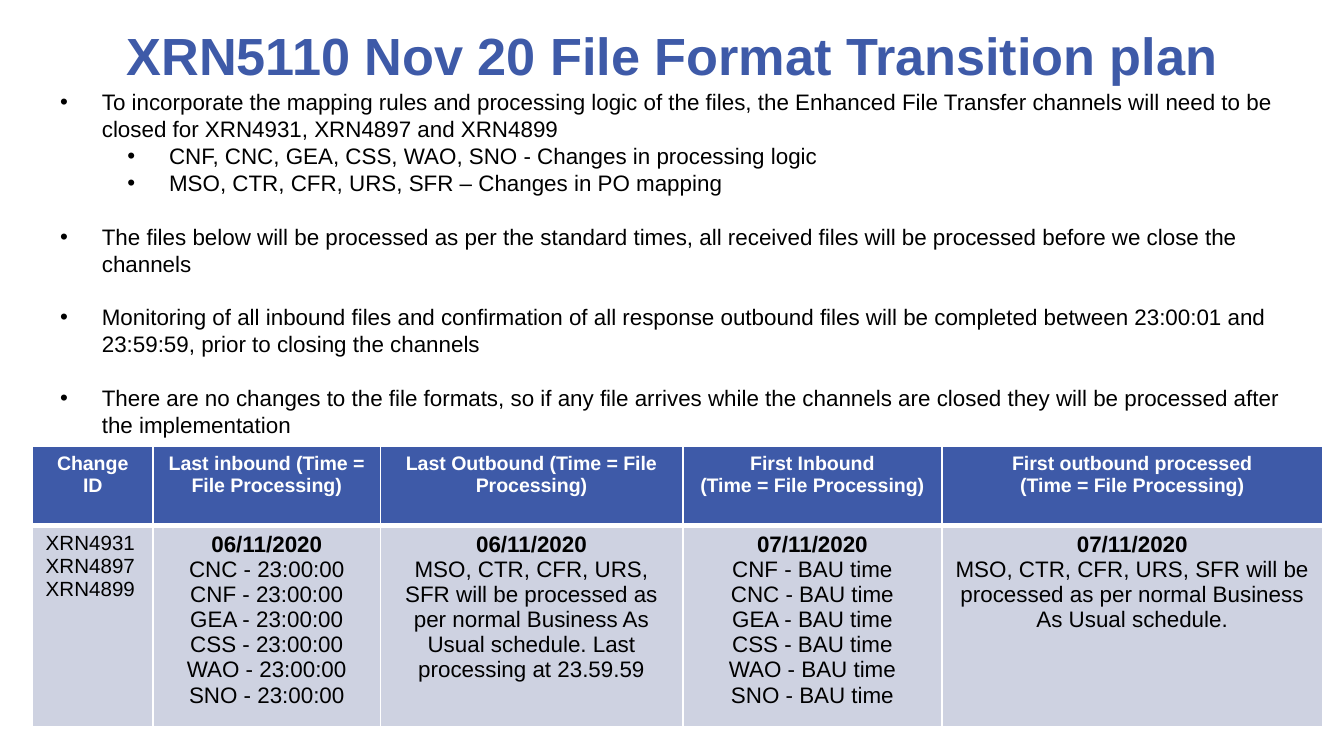
from dataclasses import dataclass

from lxml import etree
from pptx import Presentation
from pptx.dml.color import RGBColor
from pptx.enum.text import MSO_ANCHOR, PP_ALIGN
from pptx.oxml.ns import qn
from pptx.util import Inches, Pt

CENTER, LEFT = PP_ALIGN.CENTER, PP_ALIGN.LEFT
MIDDLE = MSO_ANCHOR.MIDDLE


@dataclass(frozen=True)
class Theme:
    font: str = "Arial"
    blue: RGBColor = RGBColor(0x3E, 0x5A, 0xA8)
    pale: RGBColor = RGBColor(0xCE, 0xD2, 0xE1)
    white: RGBColor = RGBColor(0xFF, 0xFF, 0xFF)
    black: RGBColor = RGBColor(0, 0, 0)
    title_size: float = 28
    body_size: float = 12
    id_size: float = 11
    header_size: float = 10.5


@dataclass(frozen=True)
class Bullet:
    text: str
    level: int = 0
    gap: float = 0


@dataclass(frozen=True)
class Column:
    width: float
    header: list[str]
    lines: list[str]
    dated: bool = True


THEME = Theme()
LINE_GAP = 14.4

BULLETS = [
    Bullet("To incorporate the mapping rules and processing logic of the files, the Enhanced "
           "File Transfer channels will need to be closed for XRN4931, XRN4897 and XRN4899"),
    Bullet("CNF, CNC, GEA, CSS, WAO, SNO - Changes in processing logic", level=1),
    Bullet("MSO, CTR, CFR, URS, SFR – Changes in PO mapping", level=1),
    Bullet("The files below will be processed as per the standard times, all received files "
           "will be processed before we close the channels", gap=LINE_GAP),
    Bullet("Monitoring of all inbound files and confirmation of all response outbound files "
           "will be completed between 23:00:01 and 23:59:59, prior to closing the channels",
           gap=LINE_GAP),
    Bullet("There are no changes to the file formats, so if any file arrives while the channels "
           "are closed they will be processed after the implementation", gap=LINE_GAP),
]

INBOUND_FILES = ["CNC", "CNF", "GEA", "CSS", "WAO", "SNO"]
FIRST_FILES = ["CNF", "CNC", "GEA", "CSS", "WAO", "SNO"]
OUTBOUND = "MSO, CTR, CFR, URS, SFR will be processed as per normal Business As Usual schedule."

# A vertical tab is a line break within a paragraph
COLUMNS = [
    Column(0.9, ["Change ID"], ["XRN4931\vXRN4897\vXRN4899"], dated=False),
    Column(1.69, ["Last inbound (Time = File Processing)"],
           ["06/11/2020"] + [f"{name} - 23:00:00" for name in INBOUND_FILES]),
    Column(2.25, ["Last Outbound (Time = File Processing)"],
           ["06/11/2020", f"{OUTBOUND} Last processing at 23.59.59"]),
    Column(1.93, ["First Inbound", "(Time = File Processing)"],
           ["07/11/2020"] + [f"{name} - BAU time" for name in FIRST_FILES]),
    Column(2.83, ["First outbound processed", "(Time = File Processing)"],
           ["07/11/2020", OUTBOUND]),
]


def style_paragraph(para, size: float, color: RGBColor, bold: bool = False,
                    align=LEFT) -> None:
    para.alignment = align
    font = para.font
    font.name, font.size, font.bold = THEME.font, Pt(size), bold
    font.color.rgb = color


def next_paragraph(frame, index: int):
    return frame.add_paragraph() if index else frame.paragraphs[0]


def add_title(page, text: str) -> None:
    box = page.shapes.add_textbox(Inches(0.5), Inches(0.06), Inches(9), Inches(0.7))
    frame = box.text_frame
    frame.word_wrap = True
    frame.vertical_anchor = MIDDLE
    para = frame.paragraphs[0]
    para.text = text
    style_paragraph(para, THEME.title_size, THEME.blue, bold=True, align=CENTER)


def add_bullets(page, bullets: list[Bullet]) -> None:
    box = page.shapes.add_textbox(Inches(0.35), Inches(0.61), Inches(9.37), Inches(3.6))
    frame = box.text_frame
    frame.word_wrap = True
    for index, bullet in enumerate(bullets):
        para = next_paragraph(frame, index)
        para.text = bullet.text
        para.level = bullet.level
        properties = para._p.get_or_add_pPr()
        properties.set("marL", str(Inches(0.31 + 0.5 * bullet.level)))
        properties.set("indent", str(Inches(-0.31)))
        etree.SubElement(properties, qn("a:buFont")).set("typeface", THEME.font)
        etree.SubElement(properties, qn("a:buChar")).set("char", "•")
        if bullet.gap:
            para.space_before = Pt(bullet.gap)
        style_paragraph(para, THEME.body_size, THEME.black)


def paint_cell(cell, fill: RGBColor, bottom: float) -> None:
    """Fill a cell and give it white borders; bottom is the lower border in points."""
    cell.fill.solid()
    cell.fill.fore_color.rgb = fill
    properties = cell._tc.get_or_add_tcPr()
    borders = {"a:lnL": 1, "a:lnR": 1, "a:lnT": 1, "a:lnB": bottom}
    for position, (tag, width) in enumerate(borders.items()):
        line = etree.Element(qn(tag), w=str(Pt(width)))
        solid = etree.SubElement(line, qn("a:solidFill"))
        etree.SubElement(solid, qn("a:srgbClr")).set("val", str(THEME.white))
        properties.insert(position, line)


def add_schedule(page, columns: list[Column]) -> None:
    frame = page.shapes.add_table(2, len(columns), Inches(0.24), Inches(3.32),
                                  Inches(9.6), Inches(2.09))
    table = frame.table
    table.rows[0].height, table.rows[1].height = Inches(0.59), Inches(1.5)
    for number, column in enumerate(columns):
        table.columns[number].width = Inches(column.width)

        # Header cell
        header = table.cell(0, number)
        paint_cell(header, THEME.blue, bottom=3)
        for index, text in enumerate(column.header):
            para = next_paragraph(header.text_frame, index)
            para.text = text
            style_paragraph(para, THEME.header_size, THEME.white, bold=True, align=CENTER)

        # Body cell: a bold date on top, except for the change IDs
        body = table.cell(1, number)
        paint_cell(body, THEME.pale, bottom=1)
        size = THEME.body_size if column.dated else THEME.id_size
        align = CENTER if column.dated else LEFT
        for index, text in enumerate(column.lines):
            para = next_paragraph(body.text_frame, index)
            para.text = text
            style_paragraph(para, size, THEME.black, bold=column.dated and index == 0,
                            align=align)


def main() -> None:
    deck = Presentation()
    deck.slide_width = Inches(10)
    deck.slide_height = deck.slide_width * 9 // 16
    page = deck.slides.add_slide(deck.slide_layouts[6])
    add_title(page, "XRN5110 Nov 20 File Format Transition plan")
    add_bullets(page, BULLETS)
    add_schedule(page, COLUMNS)
    deck.save("out.pptx")


if __name__ == "__main__":
    main()
